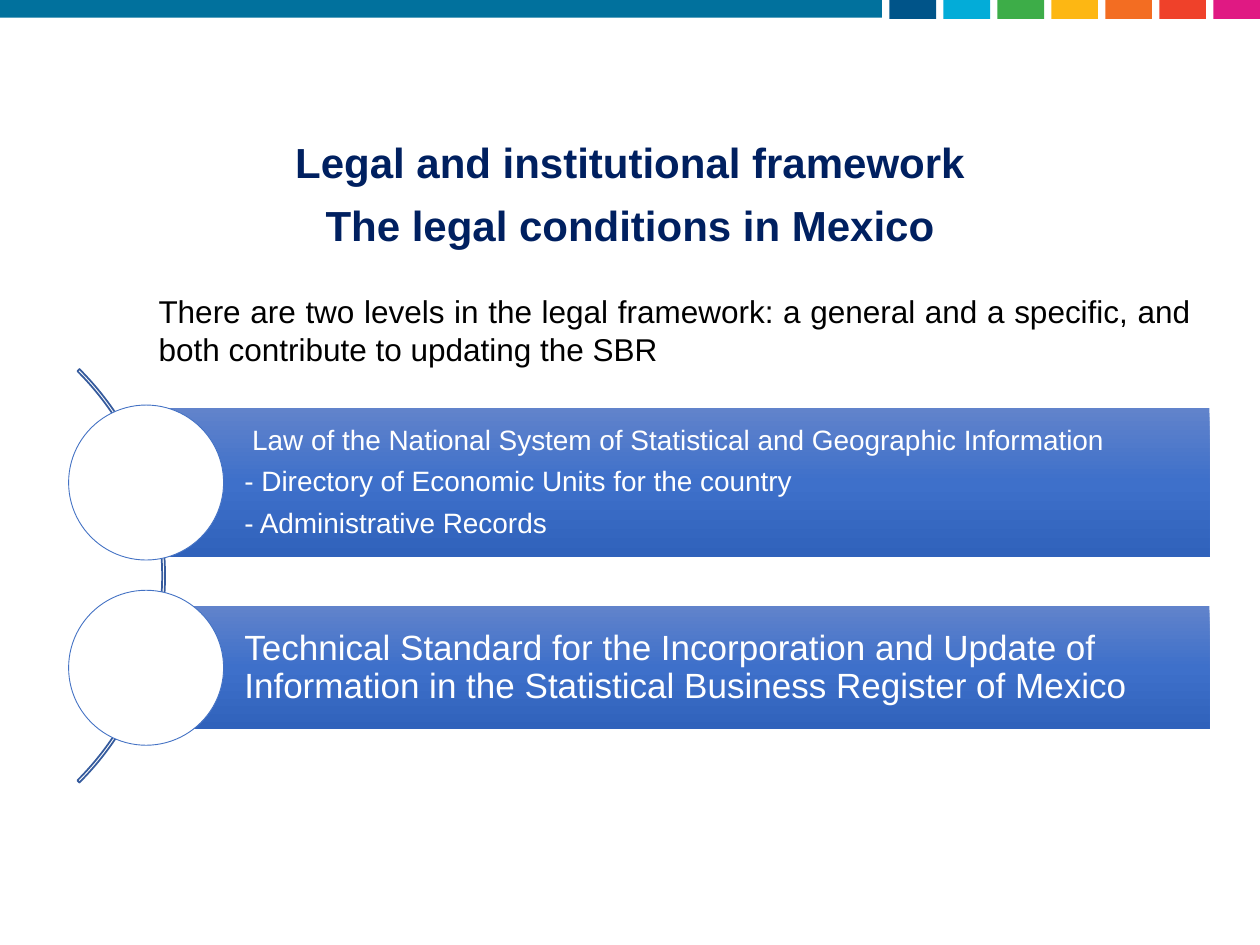
from copy import deepcopy
from pptx import Presentation
from pptx import util as u
from pptx.dml.color import RGBColor
from pptx.enum import shapes, text
from pptx.oxml.ns import qn

NAVY = RGBColor(0x00, 0x20, 0x60)
BLACK = RGBColor(0, 0, 0)
WHITE = RGBColor(0xFF, 0xFF, 0xFF)
TEAL = RGBColor(0x01, 0x71, 0x9D)
ARC = RGBColor(0x36, 0x5B, 0x9D)
RING = RGBColor(0x44, 0x72, 0xC4)
BLEND = [RGBColor.from_string(c) for c in ("6183CB", "3E70CA", "3062BB")]
CHIPS = [RGBColor.from_string(c) for c in (
    "005489", "03ACD8", "3DAD48", "FDB713", "F36D22", "EF412A", "E01983")]

TITLE = ["Legal and institutional framework", "The legal conditions in Mexico"]
INTRO = ["There are two levels in the legal framework: a general and a specific, "
         "and both contribute to updating the SBR"]
LEVELS = [
    dict(top=3.24, high=1.18, size=16, pad=0.04, after=6.4, lines=[
        " Law of the National System of Statistical and Geographic Information",
        "- Directory of Economic Units for the country",
        "- Administrative Records"]),
    dict(top=4.81, high=0.98, size=20, pad=0.06, after=8, lines=[
        "Technical Standard for the Incorporation and Update of Information "
        "in the Statistical Business Register of Mexico"]),
]
KIND = shapes.MSO_SHAPE
ALIGN = text.PP_ALIGN
LEFT, DISC = 1.16, 1.23


def put(slide, kind, box, fill=None, line=None, width=1):
    shape = slide.shapes.add_shape(kind, *map(u.Inches, box))
    shape.shadow.inherit = False
    if fill is None:
        shape.fill.background()
    else:
        shape.fill.solid()
        shape.fill.fore_color.rgb = fill
    if line is None:
        shape.line.fill.background()
    else:
        shape.line.color.rgb = line
        shape.line.width = u.Pt(width)
    return shape


def blend(shape):
    shape.fill.gradient()
    shape.fill.gradient_angle = 270
    stops = shape._element.spPr.find(qn("a:gradFill")).find(qn("a:gsLst"))
    stops.insert(1, deepcopy(stops[0]))
    for i, (stop, color) in enumerate(zip(shape.fill.gradient_stops, BLEND)):
        stop.position = i / 2
        stop.color.rgb = color


def write(frame, lines, font, para, first=None):
    frame.word_wrap = True
    for i, line in enumerate(lines):
        p = frame.paragraphs[0] if i == 0 else frame.add_paragraph()
        p.text = line
        for key, val in para.items():
            if i or key != "space_before":
                setattr(p, key, val)
        p.font.name = "Arial"
        p.font.size = u.Pt(font["size"])
        p.font.bold = font.get("bold", False)
        p.font.color.rgb = font["color"]


def label(slide, box, lines, font, para):
    shape = slide.shapes.add_textbox(*map(u.Inches, box))
    write(shape.text_frame, lines, font, para)
    return shape


def level(slide, item):
    top, high, pad = item["top"], item["high"], item["pad"]
    bar = put(slide, KIND.RECTANGLE, (LEFT, top, 8.44, high))
    blend(bar)
    frame = bar.text_frame
    form = dict(margin_left=0.78, margin_right=pad, margin_top=pad, margin_bottom=pad)
    for key, val in form.items():
        setattr(frame, key, u.Inches(val))
    frame.vertical_anchor = text.MSO_ANCHOR.MIDDLE
    write(frame, item["lines"], dict(size=item["size"], color=WHITE),
          dict(alignment=ALIGN.LEFT, line_spacing=0.9, space_after=u.Pt(item["after"])))
    mid = top + high / 2
    put(slide, KIND.OVAL, (LEFT - DISC / 2, mid - DISC / 2, DISC, DISC), WHITE, RING, 0.5)


def main():
    deck = Presentation()
    deck.slide_width, deck.slide_height = u.Inches(10), u.Inches(7.5)
    slide = deck.slides.add_slide(deck.slide_layouts[6])

    put(slide, KIND.RECTANGLE, (0, 0, 7, 0.14), TEAL)
    step = (9.63 - 7.06) / (len(CHIPS) - 1)
    for i, color in enumerate(CHIPS):
        put(slide, KIND.RECTANGLE, (7.06 + i * step, 0, 0.37, 0.15), color)

    label(slide, (1.29, 1.08, 7.42, 0.94), TITLE, dict(size=24, bold=True, color=NAVY),
          dict(alignment=ALIGN.CENTER, line_spacing=0.9, space_before=u.Pt(10)))

    arc = put(slide, KIND.BLOCK_ARC, (-3.33, 2.25, 4.64, 4.64), line=ARC)
    for i, val in enumerate((189, 27, 0.005)):
        arc.adjustments[i] = val
    for item in LEVELS:
        level(slide, item)

    label(slide, (LEFT, 2.27, 8.39, 0.71), INTRO, dict(size=18, color=BLACK),
          dict(alignment=ALIGN.JUSTIFY, space_after=u.Pt(6)))
    deck.save("out.pptx")


if __name__ == "__main__":
    main()
